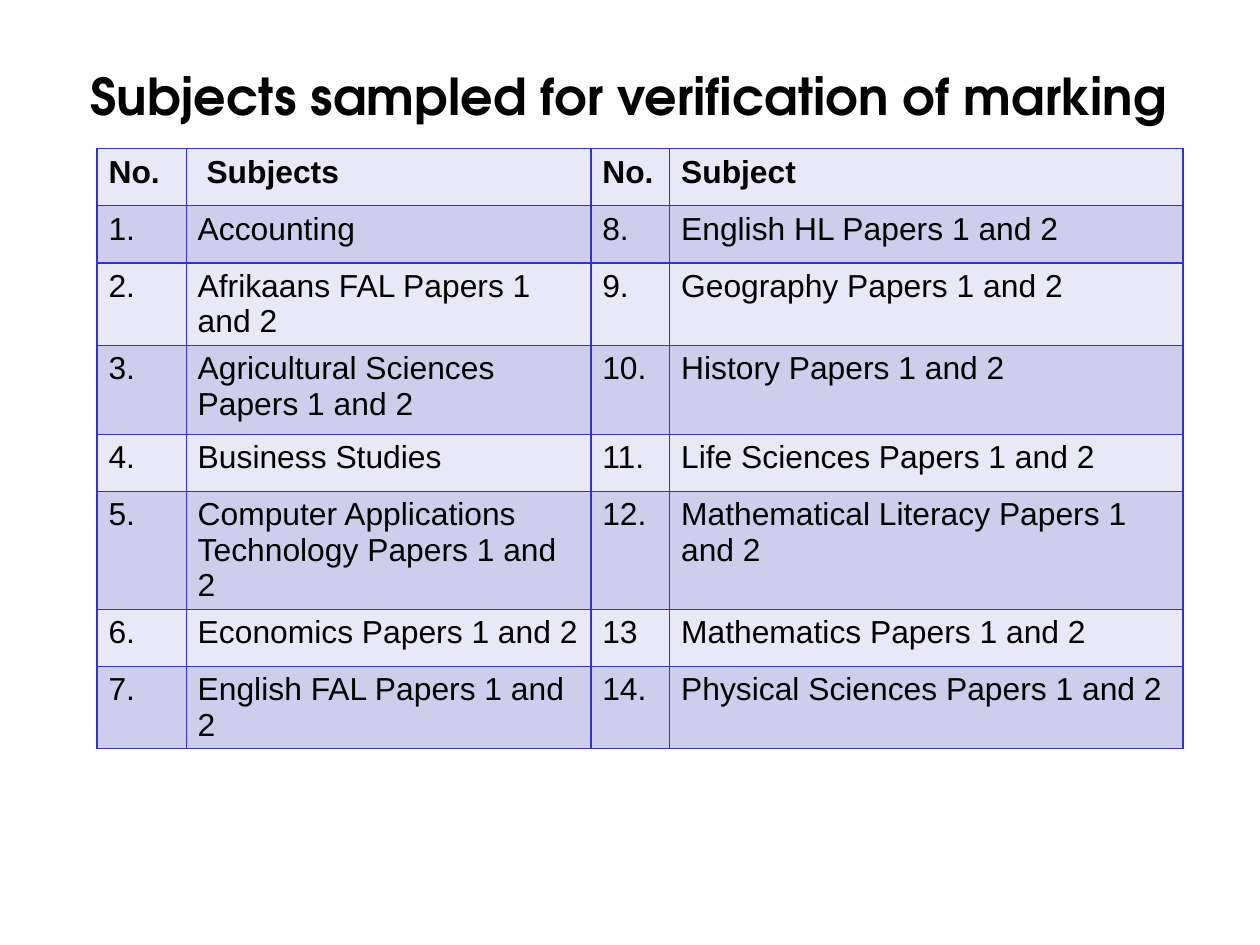
import pptx
import pptx.dml.color
import pptx.enum.text
import pptx.oxml
import pptx.oxml.ns
import pptx.util
from dataclasses import dataclass

Inches = pptx.util.Inches
Pt = pptx.util.Pt


@dataclass(frozen=True)
class Theme:
    ink: str = "000000"
    line: str = "3333CC"
    bands: tuple = ("E8E8F6", "CECEEC")
    head: str = "TeX Gyre Adventor"
    body: str = "Arial"
    big: int = 32
    small: int = 20
    rule: int = 1


THEME = Theme()
# The page is 28 by 21 cm
PAGE = (28 / 2.54, 21 / 2.54)
WIDTHS = (0.78, 3.54, 0.69, 4.49)
HEIGHTS = (0.5, 0.5, 0.72, 0.78, 0.5, 1.03, 0.5, 0.72)
ROWS = (
    ("No.", " Subjects", "No.", "Subject"),
    ("1.", "Accounting", "8.", "English HL Papers 1 and 2"),
    ("2.", "Afrikaans FAL Papers 1 and 2", "9.", "Geography Papers 1 and 2"),
    ("3.", "Agricultural Sciences Papers 1 and 2", "10.",
     "History Papers 1 and 2"),
    ("4.", "Business Studies", "11.", "Life Sciences Papers 1 and 2"),
    ("5.", "Computer Applications Technology Papers 1 and 2", "12.",
     "Mathematical Literacy Papers 1 and 2"),
    ("6.", "Economics Papers 1 and 2", "13", "Mathematics Papers 1 and 2"),
    ("7.", "English FAL Papers 1 and 2", "14.",
     "Physical Sciences Papers 1 and 2"),
)


def color(code):
    return pptx.dml.color.RGBColor.from_string(code)


def set_font(para, name, size, bold):
    font = para.font
    font.name, font.size, font.bold = name, Pt(size), bold
    font.color.rgb = color(THEME.ink)


def add_edges(cell):
    # Borders come before the fill in the cell properties
    props = cell._tc.get_or_add_tcPr()
    for spot, side in enumerate(("lnL", "lnR", "lnT", "lnB")):
        props.insert(spot, pptx.oxml.parse_xml(
            f'<a:{side} {pptx.oxml.ns.nsdecls("a")} w="{Pt(THEME.rule)}">'
            f'<a:solidFill><a:srgbClr val="{THEME.line}"/></a:solidFill>'
            f'</a:{side}>'))


def add_title(slide, text, left, top, width, height):
    title = slide.shapes.title
    title.left, title.top = Inches(left), Inches(top)
    title.width, title.height = Inches(width), Inches(height)
    frame = title.text_frame
    frame.text = text
    frame.word_wrap = True
    frame.auto_size = pptx.enum.text.MSO_AUTO_SIZE.NONE
    frame.vertical_anchor = pptx.enum.text.MSO_ANCHOR.MIDDLE
    frame.margin_left = frame.margin_right = 0
    frame.margin_top = frame.margin_bottom = 0
    para = frame.paragraphs[0]
    para.alignment = pptx.enum.text.PP_ALIGN.CENTER
    para.line_spacing = 0.93
    set_font(para, THEME.head, THEME.big, True)


def add_grid(slide, left, top):
    table = slide.shapes.add_table(
        len(ROWS), len(WIDTHS), Inches(left), Inches(top),
        Inches(sum(WIDTHS)), Inches(sum(HEIGHTS))).table
    table.horz_banding = False
    for col, width in zip(table.columns, WIDTHS):
        col.width = Inches(width)
    for num, (row, height) in enumerate(zip(table.rows, HEIGHTS)):
        row.height = Inches(height)
        for cell, text in zip(row.cells, ROWS[num]):
            cell.text = text
            cell.fill.solid()
            cell.fill.fore_color.rgb = color(THEME.bands[num % 2])
            add_edges(cell)
            set_font(cell.text_frame.paragraphs[0], THEME.body,
                     THEME.small, num == 0)


def main():
    deck = pptx.Presentation()
    deck.slide_width, deck.slide_height = map(Inches, PAGE)
    slide = deck.slides.add_slide(deck.slide_layouts[5])
    # Heading
    add_title(slide, "Subjects sampled for verification of marking",
              0.55, 0.35, 9.91, 1.02)
    # Subject list
    add_grid(slide, 0.85, 1.3)
    deck.save("out.pptx")


if __name__ == "__main__":
    main()
